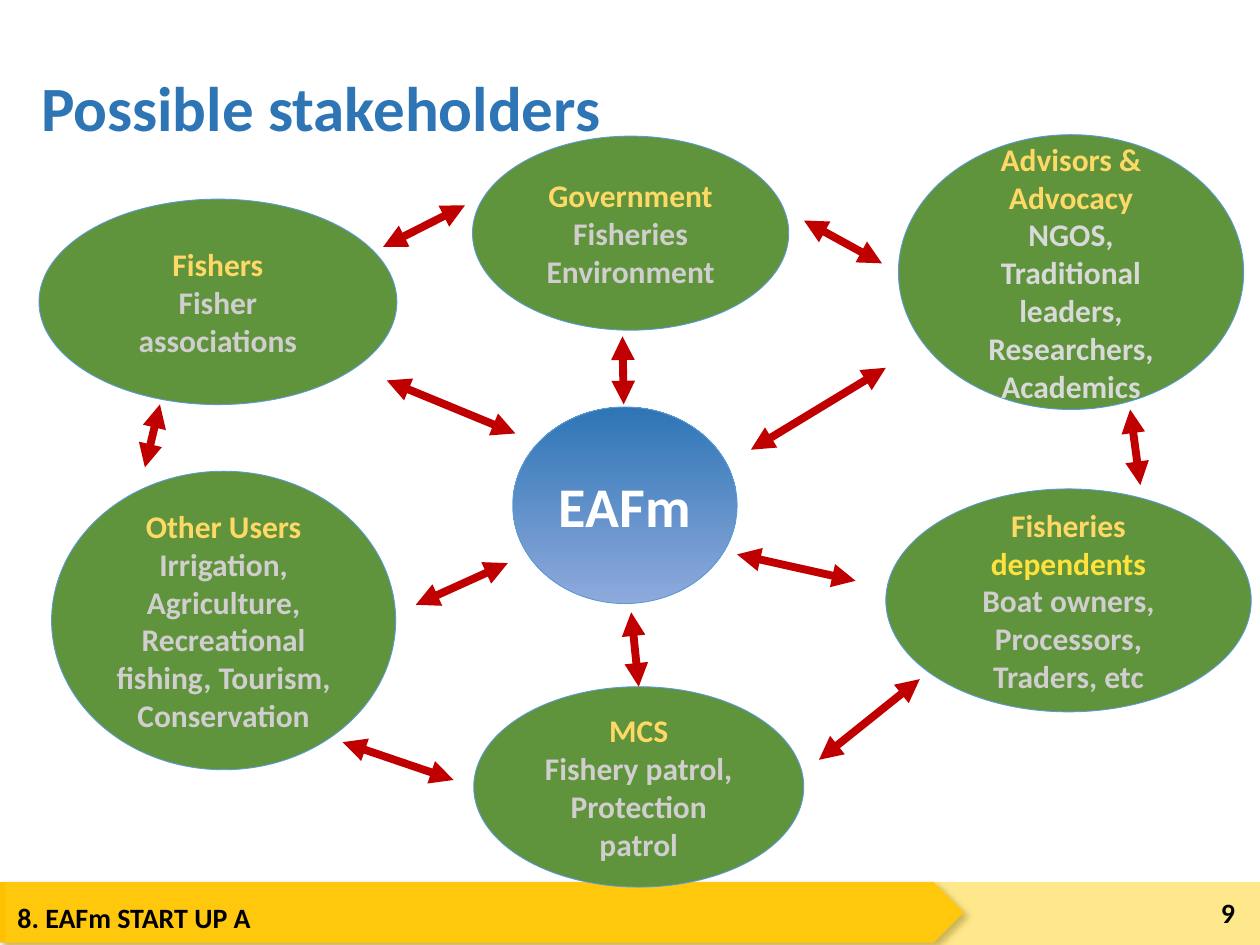
from lxml import etree
from pptx import Presentation
from pptx.dml.color import RGBColor
from pptx.enum.shapes import MSO_CONNECTOR as Connector, MSO_SHAPE as Shape
from pptx.enum.text import MSO_ANCHOR as Anchor, PP_ALIGN as Align
from pptx.oxml.ns import qn
from pptx.util import Pt

WHITE = RGBColor(0xFF, 0xFF, 0xFF)
BLACK = RGBColor(0, 0, 0)
GREEN = RGBColor(0x5F, 0x93, 0x3C)
OUTLINE = RGBColor(0x5B, 0x9B, 0xD5)
BLUE = RGBColor(0x2E, 0x75, 0xB6)
LIGHT_BLUE = RGBColor(0x8F, 0xAA, 0xDC)
RED = RGBColor(0xC0, 0, 0)
GOLD = RGBColor(0xFF, 0xD9, 0x66)
YELLOW = RGBColor(0xFF, 0xE2, 0x3C)
GREY = RGBColor(0xD0, 0xCE, 0xCE)
PALE_GREY = RGBColor(0xD9, 0xD9, 0xD9)
AMBER = RGBColor(0xFF, 0xC0, 0)
BAND = RGBColor(0xFF, 0xD0, 0x1B)

STAKEHOLDERS = [
    ((22.3, 113.8, 204.5, 117.4),
     [[("Fishers", GOLD)], [("Fisher associations", GREY)]]),
    ((270, 77.8, 180.7, 110.9),
     [[("Government", GOLD)], [("Fisheries", GREY)], [("Environment", GREY)]]),
    ((506.2, 279.4, 208.8, 127.4),
     [[("Fisheries ", GOLD), ("dependents", YELLOW)],
      [("Boat owners, Processors, Traders, etc", GREY)]]),
    ((270.7, 392.4, 188.6, 114.5),
     [[("MCS", GOLD)], [("Fishery patrol, Protection patrol", GREY)]]),
    ((513.4, 77, 197.3, 157),
     [[("Advisors & Advocacy", GOLD)], [("NGOS,", PALE_GREY)],
      [("Traditional leaders,", PALE_GREY)],
      [("Researchers, Academics", PALE_GREY)]]),
    ((29.5, 269.3, 196.6, 170.6),
     [[("Other Users", GOLD)],
      [("Irrigation, Agriculture, Recreational fishing, Tourism, "
        "Conservation", GREY)]]),
]

HUB_ARROWS = [
    (488.9, 331.9, 421.2, 316.8), (506.2, 210.2, 429.1, 257),
    (355.7, 192.2, 356.4, 231.1), (294.5, 247.7, 221, 217.4),
    (365, 392.4, 360.7, 349.9), (290.2, 321.8, 237.6, 345.6),
]
RING_ARROWS = [
    (525.6, 388.1, 468, 434.2), (259.2, 445.7, 195.8, 424.1),
    (645.8, 234, 651.6, 277.2), (265.7, 117.4, 218.9, 141.1),
    (459.4, 126, 504, 150.5), (91.4, 231.1, 82.8, 267.1),
]


def points(values):
    return [Pt(value) for value in values]


def write(shape, paragraphs, size, align, anchor):
    frame = shape.text_frame
    frame.word_wrap = True
    frame.vertical_anchor = anchor
    for index, pieces in enumerate(paragraphs):
        para = frame.add_paragraph() if index else frame.paragraphs[0]
        para.alignment = align
        for text, color in pieces:
            span = para.add_run()
            span.text = text
            span.font.name = "Calibri"
            span.font.size = Pt(size)
            span.font.bold = True
            span.font.color.rgb = color


def add_label(page, bounds, text, size, color, align, anchor):
    box = page.shapes.add_textbox(*points(bounds))
    write(box, [[(text, color)]], size, align, anchor)
    return box


def add_plain(page, kind, bounds, color):
    shape = page.shapes.add_shape(kind, *points(bounds))
    shape.shadow.inherit = False
    shape.fill.solid()
    shape.fill.fore_color.rgb = color
    shape.line.fill.background()
    return shape


def add_ellipse(page, bounds, paragraphs, size):
    ellipse = add_plain(page, Shape.OVAL, bounds, GREEN)
    ellipse.line.color.rgb = OUTLINE
    ellipse.line.width = Pt(0.5)
    write(ellipse, paragraphs, size, Align.CENTER, Anchor.MIDDLE)
    return ellipse


def add_hub(page):
    hub = add_ellipse(page, (293, 232.6, 128.2, 112.3), [[("EAFm", WHITE)]], 32)
    hub.fill.gradient()
    hub.fill.gradient_angle = 90
    for stop, color, place in zip(hub.fill.gradient_stops, (LIGHT_BLUE, BLUE), (0, 1)):
        stop.color.rgb = color
        stop.position = place


def add_arrow(page, ends):
    arrow = page.shapes.add_connector(Connector.STRAIGHT, *points(ends))
    arrow.line.color.rgb = RED
    arrow.line.width = Pt(4.5)
    line = arrow.line._get_or_add_ln()
    for end in ("a:headEnd", "a:tailEnd"):
        etree.SubElement(line, qn(end), type="triangle")
    etree.SubElement(arrow._element.spPr, qn("a:effectLst"))


def add_alpha(color, percent):
    etree.SubElement(color, qn("a:alpha"), val=str(percent * 1000))


def add_footer(page):
    plate = add_plain(page, Shape.PENTAGON, (0, 504, 550.8, 34.6), AMBER)
    effects = plate._element.spPr.find(qn("a:effectLst"))
    shadow = etree.SubElement(effects, qn("a:outerShdw"), blurRad=str(Pt(4)),
                              dist=str(Pt(3)), dir=str(45 * 60000))
    add_alpha(etree.SubElement(shadow, qn("a:srgbClr"), val=str(BLACK)), 40)
    band = add_plain(page, Shape.RECTANGLE, (2.9, 504, 717.1, 38.2), BAND)
    add_alpha(band._element.spPr.find(qn("a:solidFill"))[0], 50)
    add_label(page, (2.9, 511.2, 529.2, 29.5), "8. EAFm START UP A",
              16, BLACK, Align.LEFT, Anchor.TOP)
    add_label(page, (660.2, 506.9, 52.6, 28.8), "9",
              16, BLACK, Align.RIGHT, Anchor.MIDDLE)


def add_title(page):
    title = add_label(page, (0, 20.9, 720, 85), "Possible stakeholders",
                      36, BLUE, Align.LEFT, Anchor.MIDDLE)
    title.fill.solid()
    title.fill.fore_color.rgb = WHITE
    title.text_frame.margin_left = Pt(23.5)
    title.text_frame.paragraphs[0].line_spacing = 0.9


def main():
    deck = Presentation()
    deck.slide_width, deck.slide_height = Pt(720), Pt(540)
    page = deck.slides.add_slide(deck.slide_layouts[6])
    add_footer(page)
    add_title(page)
    for bounds, paragraphs in STAKEHOLDERS:
        add_ellipse(page, bounds, paragraphs, 18)
    add_hub(page)
    for ends in HUB_ARROWS + RING_ARROWS:
        add_arrow(page, ends)
    deck.save("out.pptx")


if __name__ == "__main__":
    main()
